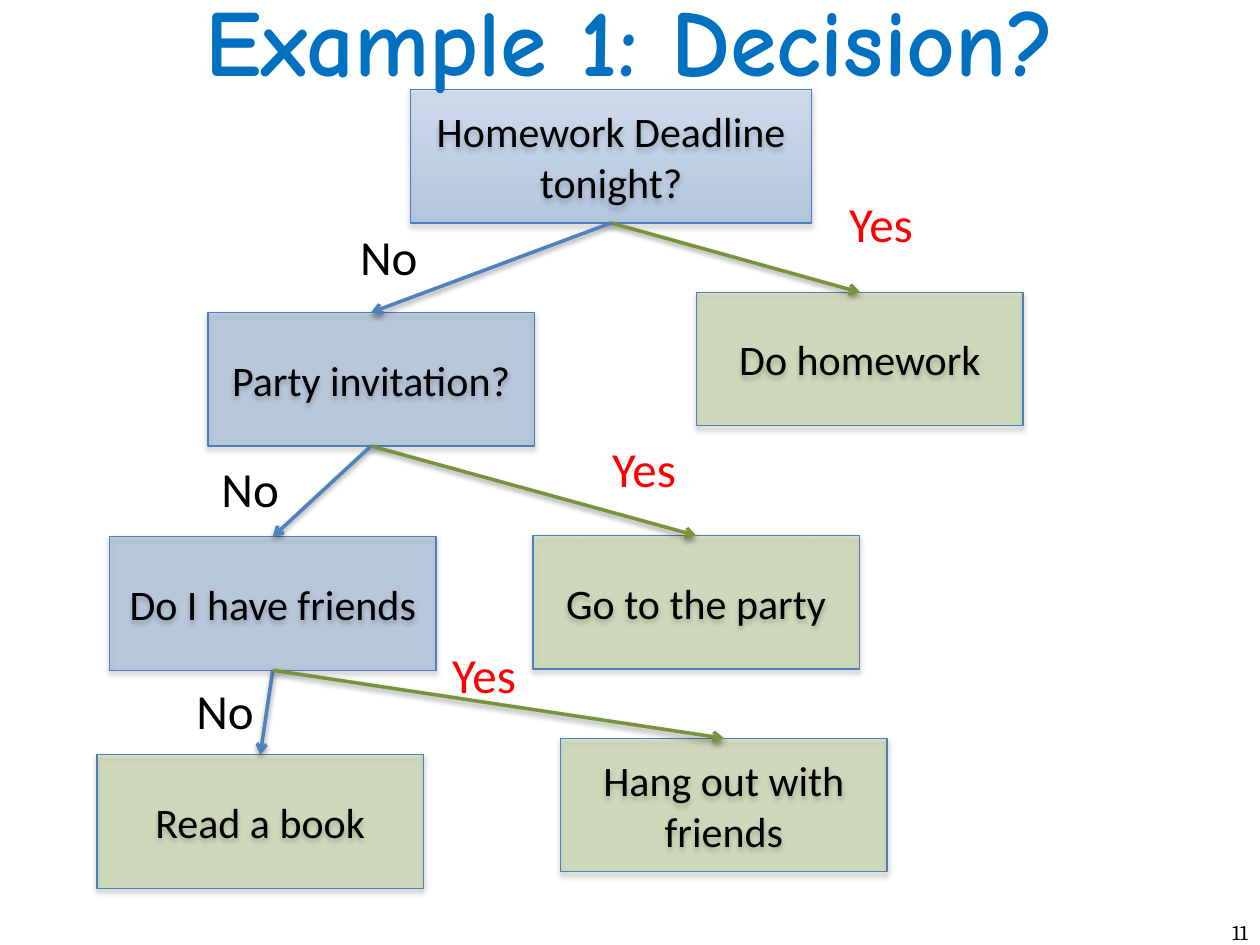
import pptx
import pptx.util
import pptx.dml.color
import pptx.enum.shapes
import pptx.enum.text
import pptx.oxml
import pptx.oxml.ns

Inches, Pt = pptx.util.Inches, pptx.util.Pt
RGB = pptx.dml.color.RGBColor
ALIGN = pptx.enum.text.PP_ALIGN
ANCHOR = pptx.enum.text.MSO_ANCHOR
FIT = pptx.enum.text.MSO_AUTO_SIZE
KIND = pptx.enum.shapes

BLACK = RGB(0x00, 0x00, 0x00)
RED = RGB(0xFF, 0x00, 0x00)
SKY = RGB(0x00, 0x70, 0xC0)
BLUE = RGB(0x4F, 0x81, 0xBD)
GREEN = RGB(0x9B, 0xBB, 0x59)
OLIVE = RGB(0x77, 0x93, 0x3C)
EDGE = RGB(0x4B, 0x7E, 0xBC)
DEEP = RGB(0x3F, 0x80, 0xCE)
PALE = RGB(0xA4, 0xC4, 0xFF)

TITLE = "Example 1: Decision?"
NUMBER = "11"
HIGH, WIDE, ROOT = 1.06, 2.59, 3.18
NODES = {
    "due": ("Homework Deadline tonight?", 3.26, 0.71, ROOT, (DEEP, PALE)),
    "work": ("Do homework", 5.53, 2.32, WIDE, (GREEN,)),
    "party": ("Party invitation?", 1.65, 2.48, WIDE, (BLUE,)),
    "friends": ("Do I have friends", 0.87, 4.26, WIDE, (BLUE,)),
    "go": ("Go to the party", 4.23, 4.25, WIDE, (GREEN,)),
    "read": ("Read a book", 0.77, 5.99, WIDE, (GREEN,)),
    "hang": ("Hang out with friends", 4.45, 5.86, WIDE, (GREEN,)),
}
LINKS = [
    ("due", "work", "Yes", 6.64, 1.49),
    ("due", "party", "No", 2.76, 1.75),
    ("party", "friends", "No", 1.66, 3.59),
    ("party", "go", "Yes", 4.76, 3.43),
    ("friends", "read", "No", 1.46, 5.35),
    ("friends", "hang", "Yes", 3.49, 5.07),
]
STYLE = {"Yes": (OLIVE, RED, 0.71), "No": (BLUE, BLACK, 0.66)}


def parts(*sizes):
    return [Inches(size) for size in sizes]


def write(frame, text, size, font, color, align, bold=False):
    para = frame.paragraphs[0]
    para.alignment = align
    run = para.add_run()
    run.text = text
    run.font.size = Pt(size)
    run.font.name = font
    run.font.bold = bold
    run.font.color.rgb = color


def shade(item, gap, alpha):
    props = item._element.spPr
    for old in props.findall(pptx.oxml.ns.qn("a:effectLst")):
        props.remove(old)
    props.append(pptx.oxml.parse_xml(
        f'<a:effectLst {pptx.oxml.ns.nsdecls("a")}>'
        f'<a:outerShdw blurRad="40000" dist="{gap}" dir="5400000" rotWithShape="0">'
        f'<a:srgbClr val="000000"><a:alpha val="{alpha}000"/></a:srgbClr>'
        '</a:outerShdw></a:effectLst>'))


def paint(box, colors):
    fill = box.fill
    if len(colors) == 1:
        fill.solid()
        fill.fore_color.rgb = colors[0]
    else:
        fill.gradient()
        fill.gradient_angle = 90
        for stop, color in zip(fill.gradient_stops, colors):
            stop.color.rgb = color
    tag = pptx.oxml.ns.qn("a:srgbClr")
    for tint in box._element.spPr.iter(tag):
        tint.append(pptx.oxml.parse_xml(
            f'<a:alpha {pptx.oxml.ns.nsdecls("a")} val="30000"/>'))


def add_node(shapes, text, left, top, wide, colors):
    box = shapes.add_shape(KIND.MSO_SHAPE.RECTANGLE, *parts(left, top, wide, HIGH))
    paint(box, colors)
    box.line.color.rgb = EDGE
    box.line.width = Pt(0.75)
    shade(box, 23000, 35)
    frame = box.text_frame
    frame.word_wrap = True
    frame.vertical_anchor = ANCHOR.MIDDLE
    write(frame, text, 24, "Calibri", BLACK, ALIGN.CENTER)
    return box


def add_link(shapes, start, end, color):
    link = shapes.add_connector(KIND.MSO_CONNECTOR.STRAIGHT, 0, 0, 0, 0)
    link.begin_connect(start, 2)
    link.end_connect(end, 0)
    link.line.color.rgb = color
    link.line.width = Pt(2)
    link.line._get_or_add_ln().append(pptx.oxml.parse_xml(
        f'<a:tailEnd {pptx.oxml.ns.nsdecls("a")} type="arrow"/>'))
    shade(link, 20000, 38)


def main():
    deck = pptx.Presentation()
    deck.slide_width, deck.slide_height = parts(10, 7.5)
    slide = deck.slides.add_slide(deck.slide_layouts[5])
    shapes = slide.shapes
    boxes = {key: add_node(shapes, *node) for key, node in NODES.items()}

    for start, end, word, left, top in LINKS:
        color, ink, wide = STYLE[word]
        add_link(shapes, boxes[start], boxes[end], color)
        label = shapes.add_textbox(*parts(left, top, wide, 0.57))
        label.text_frame.word_wrap = False
        label.text_frame.auto_size = FIT.SHAPE_TO_FIT_TEXT
        write(label.text_frame, word, 28, "Calibri", ink, ALIGN.LEFT)

    page = shapes.add_textbox(*parts(7.92, 7.25, 2.08, 0.25))
    page.text_frame.word_wrap = True
    write(page.text_frame, NUMBER, 12, "Cambria", BLACK, ALIGN.RIGHT)

    title = shapes.title
    title.left, title.top, title.width, title.height = parts(0, 0, 10, 0.61)
    title.text_frame.auto_size = FIT.NONE
    title.text_frame.vertical_anchor = ANCHOR.MIDDLE
    write(title.text_frame, TITLE, 54, "Comic Neue", SKY, ALIGN.CENTER, True)
    shapes._spTree.append(title._element)

    deck.save("out.pptx")


if __name__ == "__main__":
    main()
